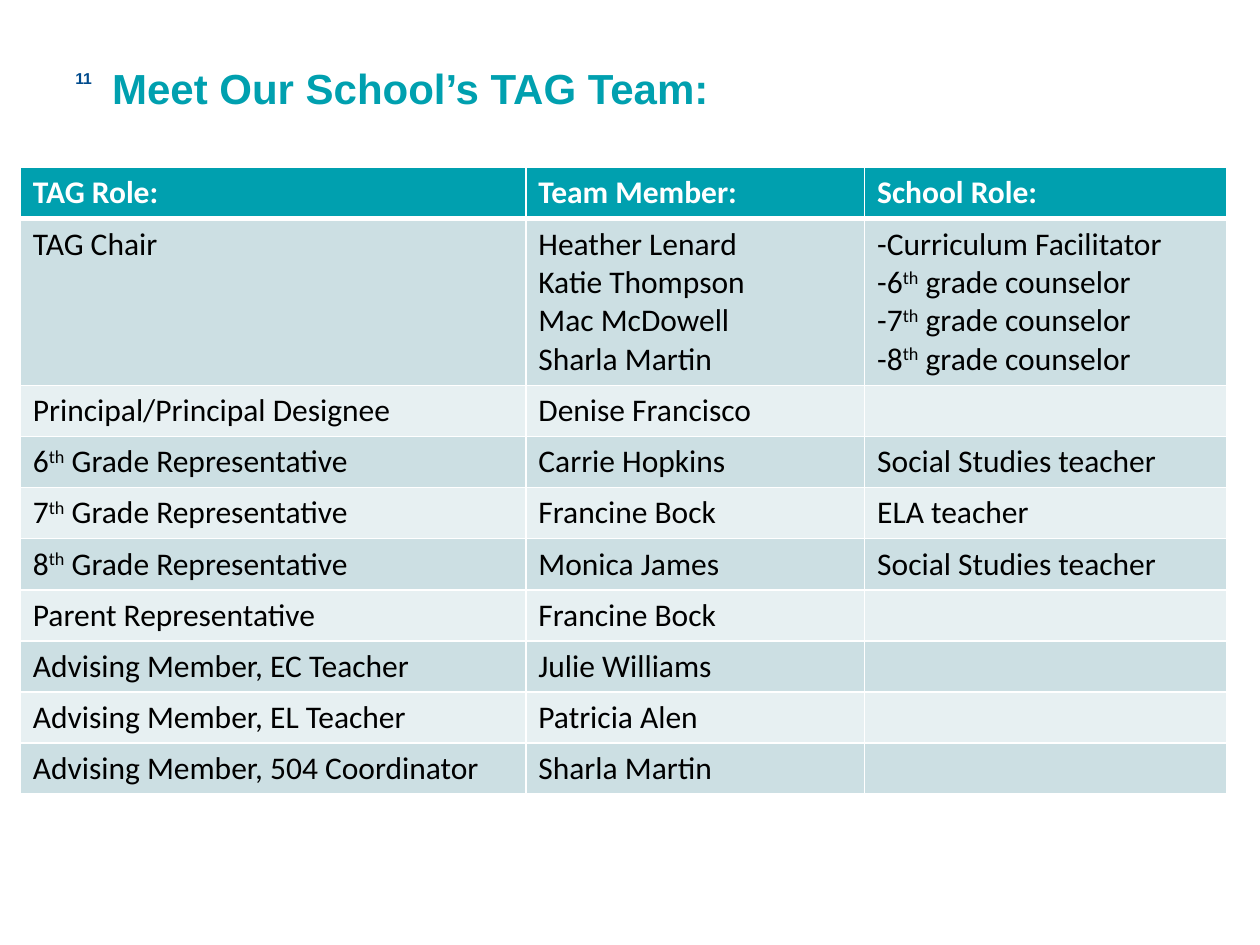
from dataclasses import dataclass

from lxml import etree
from pptx import Presentation
from pptx.dml.color import RGBColor
from pptx.enum.text import MSO_ANCHOR
from pptx.oxml.ns import qn
from pptx.util import Cm, Pt

TOP, MIDDLE = MSO_ANCHOR.TOP, MSO_ANCHOR.MIDDLE
TEAL = RGBColor(0x00, 0xA0, 0xAF)
NAVY = RGBColor(0x00, 0x4B, 0x8D)
WHITE = RGBColor(0xFF, 0xFF, 0xFF)
BLACK = RGBColor(0x00, 0x00, 0x00)
BAND_DARK = RGBColor(0xCC, 0xDF, 0xE3)
BAND_LIGHT = RGBColor(0xE7, 0xF0, 0xF2)

ROW_HEIGHT = 1.03
CHAIR_HEIGHT = 3.36
COLUMN_WIDTHS = (10.19, 6.83, 7.29)


@dataclass(frozen=True)
class Style:
    font: str
    size: int
    color: RGBColor
    bold: bool


@dataclass(frozen=True)
class Label:
    text: str
    left: float
    top: float
    width: float
    height: float
    anchor: MSO_ANCHOR
    style: Style
    spacing: int | None = None


@dataclass(frozen=True)
class Member:
    role: str
    names: str
    school_role: str = ""


HEADER_STYLE = Style("Calibri", 18, WHITE, True)
BODY_STYLE = Style("Calibri", 18, BLACK, False)

LABELS = (
    Label("Meet Our School’s TAG Team:", 2.01, 1.17, 15.67, 1.37, TOP,
          Style("Arial", 24, TEAL, True), 28),
    Label("11", 1.27, 1.07, 5.92, 1.02, MIDDLE, Style("Arial", 9, NAVY, True)),
)

TEAM = (
    Member("TAG Role:", "Team Member:", "School Role:"),
    Member("TAG Chair",
           "Heather Lenard\nKatie Thompson\nMac McDowell\nSharla Martin",
           "-Curriculum Facilitator\n-6^th^ grade counselor\n"
           "-7^th^ grade counselor\n-8^th^ grade counselor"),
    Member("Principal/Principal Designee", "Denise Francisco"),
    Member("6^th^ Grade Representative", "Carrie Hopkins", "Social Studies teacher"),
    Member("7^th^ Grade Representative", "Francine Bock", "ELA teacher"),
    Member("8^th^ Grade Representative", "Monica James", "Social Studies teacher"),
    Member("Parent Representative", "Francine Bock"),
    Member("Advising Member, EC Teacher", "Julie Williams"),
    Member("Advising Member, EL Teacher", "Patricia Alen"),
    Member("Advising Member, 504 Coordinator", "Sharla Martin"),
)


def write(tf, text: str, style: Style) -> None:
    for i, line in enumerate(text.split("\n")):
        p = tf.add_paragraph() if i else tf.paragraphs[0]
        p.font.size = Pt(style.size)
        for j, part in enumerate(line.split("^")):
            if not part:
                continue
            r = p.add_run()
            r.text = part
            r.font.name = style.font
            r.font.size = Pt(style.size)
            r.font.bold = style.bold
            r.font.color.rgb = style.color
            if j % 2:
                r._r.get_or_add_rPr().set("baseline", "30000")


def add_label(s, label: Label) -> None:
    sp = s.shapes.add_textbox(Cm(label.left), Cm(label.top),
                              Cm(label.width), Cm(label.height))
    tf = sp.text_frame
    tf.word_wrap = True
    tf.vertical_anchor = label.anchor
    write(tf, label.text, label.style)
    if label.spacing:
        tf.paragraphs[0].line_spacing = Pt(label.spacing)


def set_borders(cell, widths: dict[str, int]) -> None:
    tcPr = cell._tc.get_or_add_tcPr()
    for i, (side, width) in enumerate(widths.items()):
        ln = etree.Element(qn(f"a:ln{side}"), w=str(Pt(width)))
        fill = etree.SubElement(ln, qn("a:solidFill"))
        etree.SubElement(fill, qn("a:srgbClr"), val=str(WHITE))
        tcPr.insert(i, ln)


def add_team_table(s) -> None:
    heights = [ROW_HEIGHT] * len(TEAM)
    heights[1] = CHAIR_HEIGHT
    table = s.shapes.add_table(len(TEAM), len(COLUMN_WIDTHS), Cm(0.41), Cm(3.38),
                               Cm(sum(COLUMN_WIDTHS)), Cm(sum(heights))).table
    for column, width in zip(table.columns, COLUMN_WIDTHS):
        column.width = Cm(width)
    for i, (row, height, member) in enumerate(zip(table.rows, heights, TEAM)):
        row.height = Cm(height)
        style = BODY_STYLE if i else HEADER_STYLE
        band = (BAND_DARK if i % 2 else BAND_LIGHT) if i else TEAL
        borders = {"L": 1, "R": 1, "T": 3 if i == 1 else 1, "B": 1 if i else 3}
        for cell, text in zip(row.cells, (member.role, member.names, member.school_role)):
            cell.fill.solid()
            cell.fill.fore_color.rgb = band
            set_borders(cell, borders)
            write(cell.text_frame, text, style)


def main() -> None:
    prs = Presentation()
    prs.slide_width, prs.slide_height = Cm(25.4), Cm(19.05)
    s = prs.slides.add_slide(prs.slide_layouts[6])
    for label in LABELS:
        add_label(s, label)
    add_team_table(s)
    prs.save("out.pptx")


if __name__ == "__main__":
    main()
